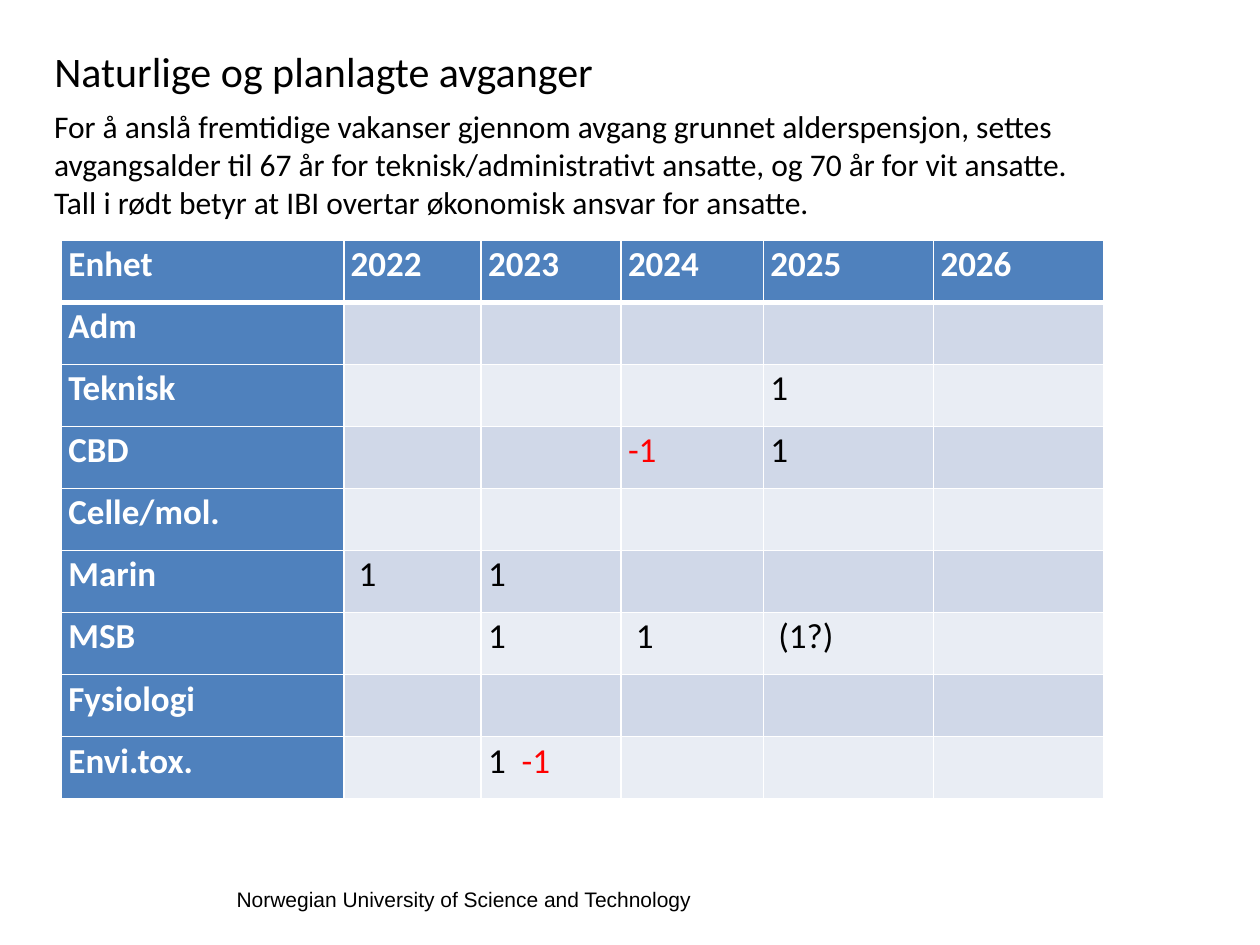
from lxml.etree import SubElement
from pptx import Presentation
from pptx.dml.color import RGBColor
from pptx.enum.text import MSO_ANCHOR, PP_ALIGN
from pptx.oxml.ns import qn
from pptx.util import Cm, Pt

HUES = {"black": "000000", "white": "FFFFFF", "red": "FF0000",
        "head": "4F81BD", "dark": "D0D8E8", "light": "E9EDF4"}


def write(frame, *runs, size=20, face="Calibri", hue="black", bold=False,
          line=None, after=0):
    """Fill a text frame with one paragraph; negative numbers turn red."""
    frame.word_wrap = True
    frame.vertical_anchor = MSO_ANCHOR.TOP
    para = frame.paragraphs[0]
    para.alignment = PP_ALIGN.LEFT
    para.space_before = Pt(0)
    para.space_after = Pt(after)
    para.line_spacing = line
    for text in runs:
        run = para.add_run()
        run.text = text
        font = run.font
        font.size, font.name, font.bold = Pt(size), face, bold
        tone = "red" if text.strip().startswith("-") else hue
        font.color.rgb = RGBColor.from_string(HUES[tone])


def edge(cell, top, foot):
    """Draw white borders; top and foot are widths in points."""
    props = cell._tc.get_or_add_tcPr()
    sides = {"a:lnL": 1, "a:lnR": 1, "a:lnT": top, "a:lnB": foot}
    for spot, (tag, width) in enumerate(sides.items()):
        rule = SubElement(props, qn(tag), w=str(Pt(width)))
        fill = SubElement(rule, qn("a:solidFill"))
        SubElement(fill, qn("a:srgbClr"), val=HUES["white"])
        props.insert(spot, rule)


deck = Presentation()
deck.slide_width, deck.slide_height = Cm(25.4), Cm(19.05)
slide = deck.slides.add_slide(deck.slide_layouts[5])

# Title
title = slide.shapes.title
title.left, title.top = Cm(0.84), Cm(0.71)
title.width, title.height = Cm(21.92), Cm(1.35)
write(title.text_frame, "Naturlige og planlagte avganger", size=24, line=1.07)

# Introduction
intro = slide.shapes.add_textbox(Cm(0.84), Cm(2.04), Cm(21.92), Cm(2.6))
write(intro.text_frame,
      "For å anslå fremtidige vakanser gjennom avgang grunnet alderspensjon, "
      "settes avgangsalder til 67 år for teknisk/administrativt ansatte, og "
      "70 år for vit ansatte. Tall i rødt betyr at IBI overtar økonomisk "
      "ansvar for ansatte.", size=18)

# Table of departures by unit and year
years = ["2022", "2023", "2024", "2025", "2026"]
units = ["Adm", "Teknisk", "CBD", "Celle/mol.", "Marin", "MSB",
         "Fysiologi", "Envi.tox."]
counts = {
    ("Teknisk", "2025"): ["1"],
    ("CBD", "2024"): ["-1"],
    ("CBD", "2025"): ["1"],
    ("Marin", "2022"): [" 1"],
    ("Marin", "2023"): ["1"],
    ("MSB", "2023"): ["1"],
    ("MSB", "2024"): [" 1"],
    ("MSB", "2025"): [" (1?)"],
    ("Envi.tox.", "2023"): ["1 ", " -1"],
}
widths = [5.69, 2.77, 2.82, 2.87, 3.43, 3.43]
high = 1.25
rows = ["Enhet"] + units
cols = ["Enhet"] + years
grid = slide.shapes.add_table(len(rows), len(cols), Cm(1.24), Cm(4.85),
                              Cm(sum(widths)), Cm(high * len(rows))).table
grid.first_col = True
for col, width in zip(grid.columns, widths):
    col.width = Cm(width)

for r, unit in enumerate(rows):
    grid.rows[r].height = Cm(high)
    for c, year in enumerate(cols):
        cell = grid.cell(r, c)
        label = r == 0 or c == 0
        if label:
            runs, shade = [year if r == 0 else unit], "head"
        else:
            runs = counts.get((unit, year), [])
            shade = "dark" if r % 2 else "light"
        cell.margin_left = cell.margin_right = Cm(0.14)
        cell.margin_top = cell.margin_bottom = 0
        cell.fill.solid()
        cell.fill.fore_color.rgb = RGBColor.from_string(HUES[shade])
        edge(cell, top=3 if r == 1 else 1, foot=3 if r == 0 else 1)
        write(cell.text_frame, *runs, hue="white" if label else "black",
              bold=label, line=1.07, after=8)

# Footer
foot = slide.shapes.add_textbox(Cm(4.52), Cm(17.75), Cm(10.59), Cm(0.76))
write(foot.text_frame, "Norwegian University of Science and Technology",
      size=12, face="Arial")

deck.save("out.pptx")
